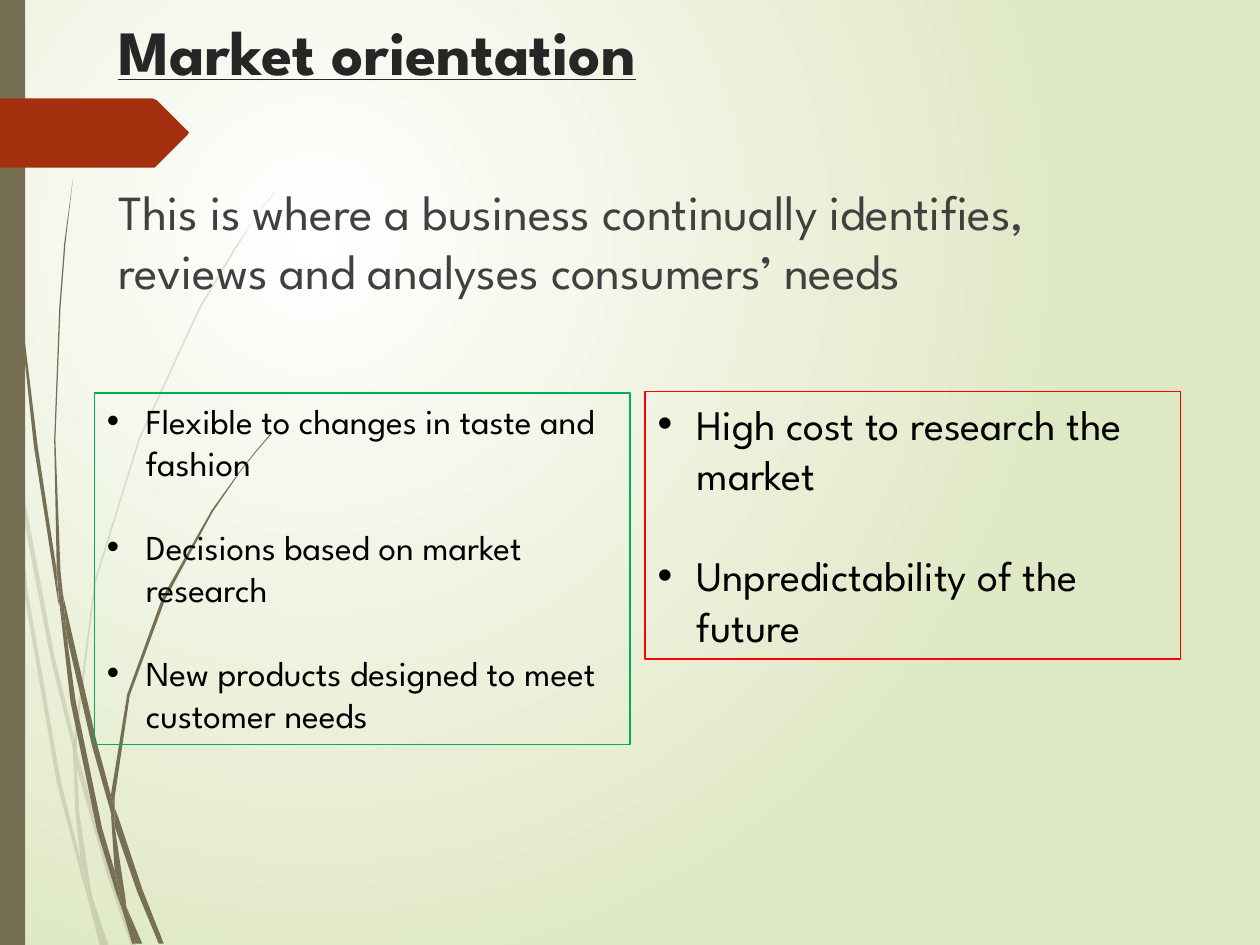
from dataclasses import dataclass
from lxml import etree
from pptx import Presentation
from pptx.dml.color import RGBColor
from pptx.enum.shapes import MSO_SHAPE as Preset
from pptx.enum.text import MSO_ANCHOR as Anchor, MSO_AUTO_SIZE as AutoSize, PP_ALIGN as Align
from pptx.oxml.ns import qn
from pptx.util import Inches, Pt

# Outlines in hundredths of an inch
FAINT_WISPS = [
    [(8, 350), (6, 322), (0, 282), (0, 299), (7, 344)],
    [(40, 522), (59, 599), (59, 586), (43, 520), (10, 345), (12, 376)],
    [(64, 607), (61, 596), (61, 610), (85, 694), (104, 750), (108, 750), (88, 692)],
    [(83, 750), (86, 750), (73, 711)],
    [(64, 683), (48, 619), (22, 469), (12, 376), (8, 350), (19, 470), (45, 621),
     (64, 693), (70, 714), (69, 707)],
    [(58, 599), (60, 646), (64, 683), (67, 692), (73, 711), (72, 706), (63, 646),
     (61, 610), (61, 608)],
    [(61, 584), (76, 462), (111, 349), (159, 245), (187, 198), (201, 175), (217, 154),
     (217, 153), (201, 175), (186, 197), (158, 244), (110, 348), (75, 461), (59, 584),
     (59, 586), (61, 596)],
    [(70, 714), (79, 750), (82, 750)],
    [(61, 608), (61, 610), (61, 596), (59, 586), (58, 599)],
    [(67, 692), (65, 683), (69, 707), (70, 714), (82, 750), (83, 750), (73, 711)],
]
DARK_WISPS = [
    [(5, 110), (14, 233), (27, 355), (46, 477), (47, 481), (45, 457), (45, 453),
     (30, 355), (15, 232), (6, 109), (4, 48), (3, 0), (2, 0), (3, 48)],
    [(73, 592), (88, 645), (88, 633), (88, 631), (77, 590), (50, 472), (53, 505)],
    [(94, 649), (91, 641), (91, 656), (109, 708), (126, 749), (130, 749), (113, 706)],
    [(91, 691), (81, 657), (60, 556), (53, 505), (47, 477), (56, 557), (77, 659),
     (92, 708), (97, 722), (96, 717)],
    [(50, 472), (48, 453), (44, 349), (48, 245), (52, 193), (58, 141), (51, 193),
     (47, 245), (43, 349), (45, 449), (49, 472)],
    [(110, 749), (113, 749), (100, 719)],
    [(47, 477), (53, 505), (50, 472), (49, 472), (45, 449), (45, 453)],
    [(91, 633), (103, 552), (131, 476), (169, 406), (191, 374), (203, 359), (216, 344),
     (215, 344), (203, 358), (191, 373), (168, 405), (129, 474), (101, 551), (88, 631),
     (91, 641)],
    [(97, 722), (105, 749), (108, 749)],
    [(88, 645), (91, 691), (96, 706), (100, 719), (100, 716), (91, 656), (90, 651)],
    [(88, 645), (90, 651), (91, 656), (91, 641), (88, 631), (88, 633)],
    [(96, 706), (91, 691), (96, 717), (97, 722), (108, 749), (110, 749), (100, 719)],
]
TITLE_TAG = [(149, 107), (124, 132), (123, 133), (121, 133), (0, 133), (0, 78), (121, 78),
             (123, 79), (124, 79), (149, 104), (150, 105)]


def colour(hex_value):
    return RGBColor.from_string(hex_value)


@dataclass
class SlideKit:
    slide: object
    font: str = "League Spartan"
    olive: str = "766F54"
    red: str = "A53010"

    def background(self, centre, edge):
        fill = self.slide.background.fill
        fill.gradient()
        for stop, position, shade in zip(fill.gradient_stops, (0, 1), (centre, edge)):
            stop.position = position
            stop.color.rgb = colour(shade)
        gradient = self.slide.element.find(".//" + qn("a:gradFill"))
        gradient.remove(gradient.find(qn("a:lin")))
        circle = etree.SubElement(gradient, qn("a:path"), path="circle")
        etree.SubElement(circle, qn("a:fillToRect"), l="50000", t="50000", r="100000", b="100000")

    def paint(self, shape, fill):
        shape.shadow.inherit = False
        shape.fill.solid()
        shape.fill.fore_color.rgb = colour(fill)
        shape.line.fill.background()

    def outline(self, points, fill, opacity=100):
        builder = self.slide.shapes.build_freeform(*points[0], scale=Inches(0.01))
        builder.add_line_segments(points[1:], close=True)
        shape = builder.convert_to_shape()
        self.paint(shape, fill)
        if opacity < 100:
            tint = shape.fill._xPr.find(".//" + qn("a:srgbClr"))
            etree.SubElement(tint, qn("a:alpha"), val=str(opacity * 1000))

    def bar(self, left, top, width, height, fill):
        box = [Inches(v) for v in (left, top, width, height)]
        self.paint(self.slide.shapes.add_shape(Preset.RECTANGLE, *box), fill)

    def style(self, paragraph, size, shade, bold=None, underline=None):
        paragraph.alignment = Align.LEFT
        for run in paragraph.runs:
            font = run.font
            font.name, font.size, font.bold, font.underline = self.font, Pt(size), bold, underline
            font.color.rgb = colour(shade)

    def text(self, left, top, width, height, words, size, shade, **emphasis):
        box = [Inches(v) for v in (left, top, width, height)]
        frame = self.slide.shapes.add_textbox(*box).text_frame
        frame.word_wrap = True
        frame.text = words
        self.style(frame.paragraphs[0], size, shade, **emphasis)

    def bullet_box(self, left, top, width, height, points, size, gap, border):
        box = [Inches(v) for v in (left, top, width, height)]
        shape = self.slide.shapes.add_shape(Preset.RECTANGLE, *box)
        shape.shadow.inherit = False
        shape.fill.background()
        shape.line.color.rgb = colour(border)
        shape.line.width = Pt(0.75)
        frame = shape.text_frame
        frame.word_wrap = True
        frame.auto_size = AutoSize.SHAPE_TO_FIT_TEXT
        frame.vertical_anchor = Anchor.TOP
        frame.text = "\n".join(points)
        indent = Inches(0.31)
        for index, paragraph in enumerate(frame.paragraphs):
            if index:
                paragraph.space_before = Pt(gap)
            props = paragraph._p.get_or_add_pPr()
            props.set("marL", str(indent))
            props.set("indent", str(-indent))
            etree.SubElement(props, qn("a:buFont"), typeface="Arial")
            etree.SubElement(props, qn("a:buChar"), char="•")
            self.style(paragraph, size, "000000")


def main():
    deck = Presentation()
    deck.slide_width, deck.slide_height = Inches(10), Inches(7.5)
    kit = SlideKit(deck.slides.add_slide(deck.slide_layouts[6]))

    # Backdrop
    kit.background("FFFFFF", "DFE8C4")
    for wisp in FAINT_WISPS:
        kit.outline(wisp, kit.olive, opacity=20)
    for wisp in DARK_WISPS:
        kit.outline(wisp, kit.olive)
    kit.bar(0, 0, 0.2, 7.5, kit.olive)
    kit.outline(TITLE_TAG, kit.red)

    # Title and definition
    kit.text(0.84, 0.05, 7.97, 1.64, "Market orientation", 36, "262626",
             bold=True, underline=True)
    kit.text(0.84, 1.39, 7.97, 4.4,
             "This is where a business continually identifies, reviews and analyses "
             "consumers’ needs", 28, "404040")

    # Benefits and drawbacks
    benefits = ["Flexible to changes in taste and fashion",
                "Decisions based on market research",
                "New products designed to meet customer needs"]
    drawbacks = ["High cost to research the market", "Unpredictability of the future"]
    kit.bullet_box(0.75, 3.12, 4.25, 2.79, benefits, 20, 24, "00B050")
    kit.bullet_box(5.12, 3.11, 4.25, 2.12, drawbacks, 24, 29, "FF0000")

    deck.save("out.pptx")


if __name__ == "__main__":
    main()
